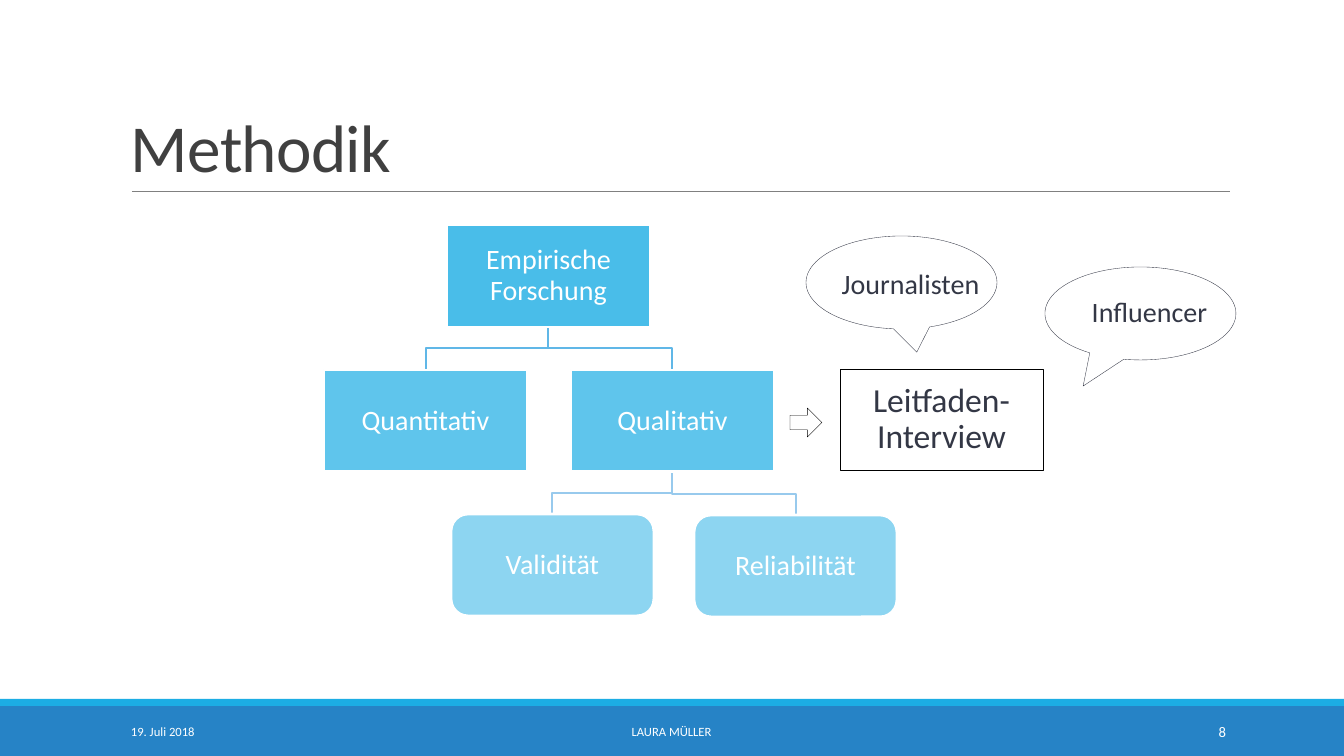
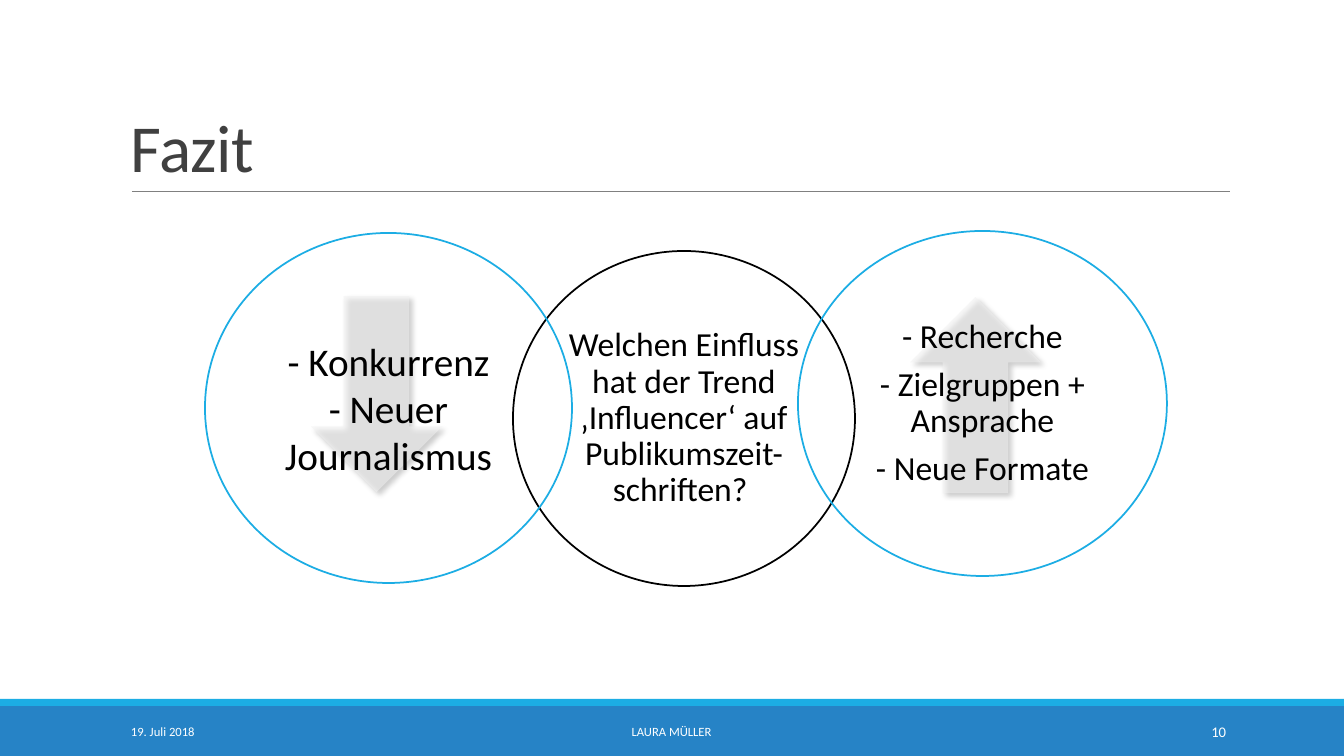
from lxml.etree import SubElement
from pptx import Presentation
from pptx.dml.color import RGBColor
from pptx.enum.shapes import MSO_CONNECTOR, MSO_SHAPE as Shape
from pptx.enum.text import MSO_ANCHOR as Anchor, PP_ALIGN as Align
from pptx.oxml.ns import qn
from pptx.util import Emu, Pt

EMU_PER_PX = 914400 / 100.8
WIDTH, HEIGHT = 1344, 756

BLUE = RGBColor(0x26, 0x83, 0xC6)
CYAN = RGBColor(0x1C, 0xAD, 0xE4)
BRANCH_TOP = RGBColor(0x60, 0xB7, 0xE7)
BRANCH_LOW = RGBColor(0x98, 0xCA, 0xED)
WHITE = RGBColor(0xFF, 0xFF, 0xFF)
BLACK = RGBColor(0, 0, 0)
INK = RGBColor(0x33, 0x37, 0x45)
TITLE_GREY = RGBColor(0x40, 0x40, 0x40)
RULE_GREY = RGBColor(0x80, 0x80, 0x80)
PALE_GREY = RGBColor(0xF2, 0xF2, 0xF2)


def px(length):
    return Emu(round(length * EMU_PER_PX))


class Deck:
    FONT = "Calibri"
    DATE, AUTHOR = "19. Juli 2018", "LAURA MÜLLER"

    def __init__(self):
        self.prs = Presentation()
        self.prs.slide_width, self.prs.slide_height = px(WIDTH), px(HEIGHT)
        self.shapes = None

    def slide(self, title, number):
        """Start a slide with its bands, rule, title and footer."""
        self.shapes = self.prs.slides.add_slide(self.prs.slide_layouts[6]).shapes
        self.shape(Shape.RECTANGLE, (0, 706, WIDTH, 50), fill=BLUE)
        self.shape(Shape.RECTANGLE, (0, 699, WIDTH, 7), fill=CYAN)
        self.rule(132, 1230, 191)
        heading = self.text((121, 31, 1109, 160), title, 48, TITLE_GREY, Align.LEFT,
                            inset=(10, 5), anchor=Anchor.BOTTOM, leading=0.85)
        heading.text_frame.paragraphs[0].runs[0].font._element.set("spc", "-50")
        for left, width, words, size, align in (
                (121, 272, self.DATE, 9, Align.LEFT),
                (406, 531, self.AUTHOR, 9, Align.CENTER),
                (1092, 144, str(number), 10.5, Align.RIGHT)):
            self.text((left, 712, width, 40), words, size, WHITE, align,
                      inset=(10, 5), leading=1)

    def rule(self, left, right, y):
        rule = self.shapes.add_connector(MSO_CONNECTOR.STRAIGHT,
                                         px(left), px(y), px(right), px(y))
        rule.line.color.rgb, rule.line.width = RULE_GREY, Pt(0.5)
        SubElement(rule._element.spPr, qn("a:effectLst"))

    def shape(self, kind, box, fill=None, alpha=100, line=None, width=1.25, adjust=()):
        shape = self.shapes.add_shape(kind, *map(px, box))
        for index, value in enumerate(adjust):
            shape.adjustments[index] = value
        self.paint(shape, fill, line, width)
        if alpha < 100:
            color = shape._element.spPr.find(qn("a:solidFill"))[0]
            SubElement(color, qn("a:alpha"), val=str(alpha * 1000))
        return shape

    def paint(self, shape, fill, line, width):
        shape.shadow.inherit = False
        if fill is None:
            shape.fill.background()
        else:
            shape.fill.solid()
            shape.fill.fore_color.rgb = fill
        if line is None:
            shape.line.fill.background()
        else:
            shape.line.color.rgb, shape.line.width = line, Pt(width)

    def text(self, box, words, size, color, align=Align.CENTER, **style):
        return self.label(self.shapes.add_textbox(*map(px, box)),
                          words, size, color, align, **style)

    def label(self, shape, words, size, color, align=Align.CENTER, inset=(1, 1),
              anchor=Anchor.MIDDLE, leading=0.9, after=0):
        """Set the text of a shape, one paragraph for each line of words."""
        frame = shape.text_frame
        frame.text = words
        frame.word_wrap, frame.vertical_anchor = True, anchor
        frame.margin_left = frame.margin_right = px(inset[0])
        frame.margin_top = frame.margin_bottom = px(inset[1])
        for paragraph in frame.paragraphs:
            paragraph.alignment, paragraph.line_spacing = align, leading
            paragraph.space_after = Pt(after)
            for run in paragraph.runs:
                run.font.name, run.font.size = self.FONT, Pt(size)
                run.font.color.rgb = color
        return shape

    def branch(self, parent, child, color):
        """Draw an elbow from below one box to the top of another."""
        x1, y1 = parent[0] + parent[2] / 2, parent[1] + parent[3]
        x2, y2 = child[0] + child[2] / 2, child[1]
        middle = (y1 + y2) / 2
        elbow = self.shapes.build_freeform(x1, y1, scale=EMU_PER_PX)
        elbow.add_line_segments([(x1, middle), (x2, middle), (x2, y2)], close=False)
        self.paint(elbow.convert_to_shape(), None, color, 1.25)

    def callout(self, box, tip, words_box, words):
        self.shape(Shape.OVAL_CALLOUT, box, line=INK, width=0.25, adjust=tip)
        self.text(words_box, words, 20, INK)

    def shaded_arrow(self, kind, box):
        arrow = self.shape(kind, box, fill=PALE_GREY, alpha=50)
        effects = arrow._element.spPr.find(qn("a:effectLst"))
        shadow = SubElement(effects, qn("a:outerShdw"), blurRad=str(Pt(4)),
                            dist=str(Pt(3)), dir="2700000", algn="tl", rotWithShape="0")
        color = SubElement(shadow, qn("a:srgbClr"), val=str(BLACK))
        SubElement(color, qn("a:alpha"), val="40000")

    def circle(self, box, words, size, line, fill=None, **style):
        ring = self.shape(Shape.OVAL, box, fill=fill, line=line)
        self.label(ring, words, size, BLACK, inset=(3, 3), **style)


def build_method(deck):
    deck.slide("Methodik", 8)
    size = (203, 102)
    research = (447, 225, *size)
    quantitative, qualitative = (324, 370, *size), (571, 370, *size)
    validity, reliability = (451, 514, *size), (694, 515, *size)

    for child in (reliability, validity):
        deck.branch(qualitative, child, BRANCH_LOW)
    for child in (qualitative, quantitative):
        deck.branch(research, child, BRANCH_TOP)
    for kind, box, alpha, words in (
            (Shape.RECTANGLE, research, 80, "Empirische Forschung"),
            (Shape.RECTANGLE, quantitative, 70, "Quantitativ"),
            (Shape.RECTANGLE, qualitative, 70, "Qualitativ"),
            (Shape.ROUNDED_RECTANGLE, validity, 50, "Validität"),
            (Shape.ROUNDED_RECTANGLE, reliability, 50, "Reliabilität")):
        node = deck.shape(kind, box, fill=CYAN, alpha=alpha, line=WHITE, width=2)
        deck.label(node, words, 20, WHITE)

    deck.shape(Shape.RIGHT_ARROW, (790, 408, 32, 29), fill=WHITE, line=BLACK, width=0.25)
    deck.callout((806, 236, 191, 93), (0.08, 0.75), (835, 249, 151, 72), "Journalisten")
    interview = deck.shape(Shape.RECTANGLE, (840, 369, 203, 101), line=BLACK, width=0.25)
    deck.label(interview, "Leitfaden- Interview", 24, INK)
    deck.callout((1045, 267, 191, 93), (-0.3, 0.78), (1074, 277, 151, 72), "Influencer")


def build_conclusion(deck):
    deck.slide("Fazit", 10)
    deck.shaded_arrow(Shape.UP_ARROW, (910, 297, 131, 196))
    deck.shaded_arrow(Shape.DOWN_ARROW, (311, 296, 131, 196))
    deck.circle((513, 251, 342, 335),
                "Welchen Einfluss hat der Trend ‚Influencer‘ auf Publikumszeit-schriften? ",
                24, BLACK, fill=WHITE)
    deck.circle((205, 233, 367, 350), "- Konkurrenz\n- Neuer Journalismus",
                28, CYAN, leading=1)
    deck.circle((798, 231, 369, 345),
                "- Recherche\n- Zielgruppen + Ansprache\n- Neue Formate",
                24, CYAN, after=8.4)


def main():
    deck = Deck()
    build_method(deck)
    build_conclusion(deck)
    deck.prs.save("out.pptx")


if __name__ == "__main__":
    main()
